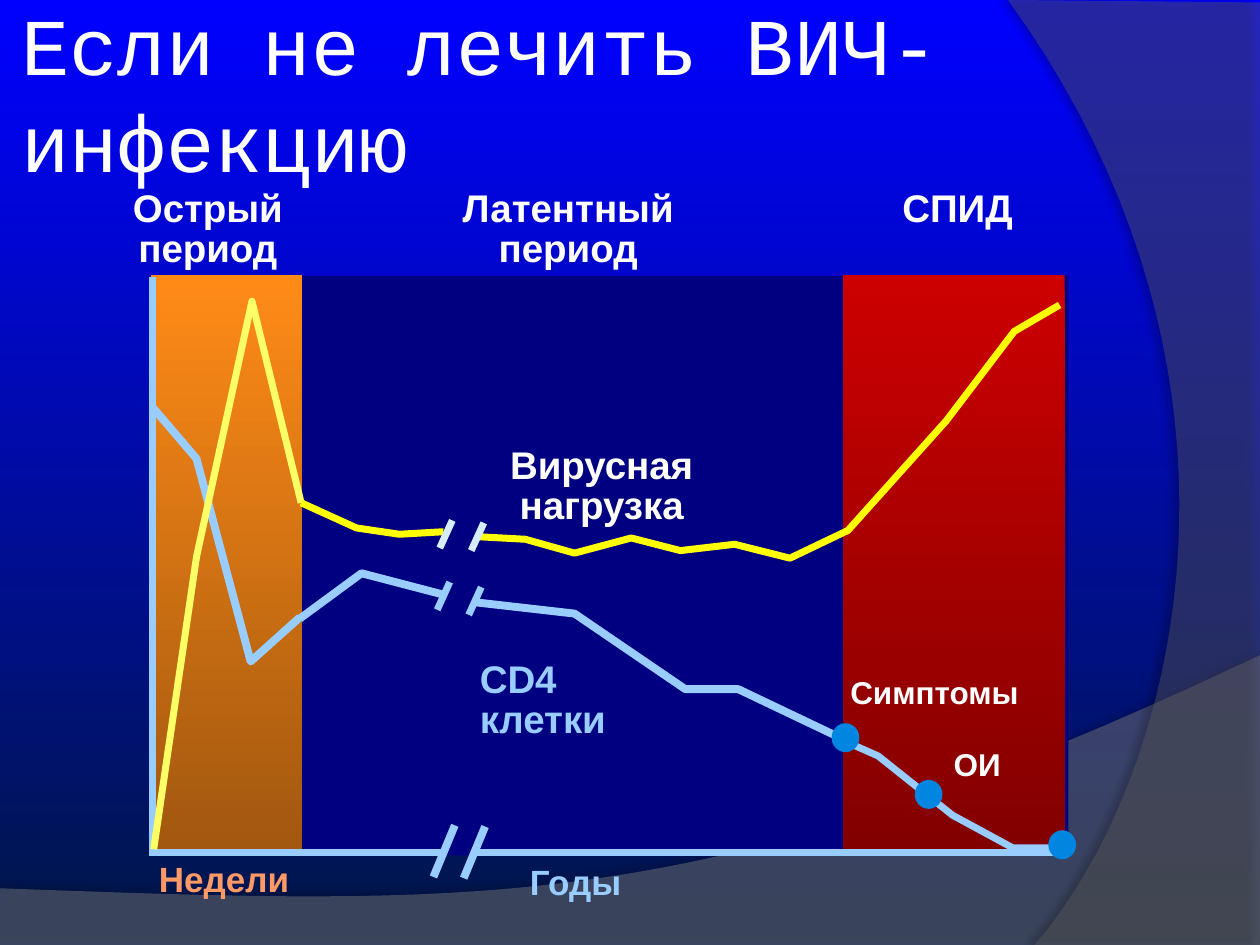
from lxml.etree import SubElement, Element
from pptx import Presentation
from pptx.dml.color import RGBColor
from pptx.enum.shapes import MSO_CONNECTOR, MSO_SHAPE
from pptx.enum.text import MSO_ANCHOR, PP_ALIGN
from pptx.oxml.ns import qn
from pptx.util import Inches, Pt

HEX = {
    "top": "0000FF", "base": "001746", "wave": "7F7F7F", "arc": "5E5E5E",
    "navy": "000080", "red": "CC0000", "wine": "820000", "amber": "FF8B17",
    "brown": "A2580F", "sky": "99CCFF", "pale": "D6ECFF", "sun": "FFFF00",
    "lemon": "FFFF66", "dot": "0085E0", "peach": "FF9966", "white": "FFFFFF",
    "black": "000000",
}
TITLE = "Если не лечить ВИЧ-инфекцию"

# A six-number point is a Bezier curve: two controls and an end.
DECOR = [  # points, colour, opacity, shadow opacity, distance, angle
    ([(0, 7.05), (0, 7.51), (10, 7.51), (10, 5.2),
      (5.59, 7.29, 3.91, 7.19, 0, 7.05)], "wave", 45, 35, 3.5, 270),
    ([(10, 0.02), (10, 7.5), (8.21, 7.5),
      (9.35, 6.19, 10.18, 3, 8, 0)], "arc", 40, 45, 4, 180),
]
PANELS = [  # left, top, width, height, colours
    (1.22, 2.19, 7.26, 4.6, ["navy"]),
    (6.69, 2.18, 1.76, 4.57, ["red", "wine"]),
    (1.2, 2.18, 1.2, 4.57, ["amber", "brown"]),
]
AXES = [  # from, to
    ((3.77, 6.77), (8.49, 6.77)),
    ((1.18, 6.77), (3.54, 6.77)),
    ((1.21, 6.79), (1.21, 2.2)),
]
CURVES = [  # colour, width, points
    ("sky", 4.5, [(1.21, 3.23), (1.56, 3.64), (1.99, 5.25), (2.38, 4.9)]),
    ("sky", 4.5, [(2.38, 4.91), (2.87, 4.55), (3.52, 4.72)]),
    ("sky", 4.5, [(3.77, 4.78), (4.56, 4.87), (5.44, 5.47), (5.86, 5.47),
                  (6.7, 5.87)]),
    ("sky", 4, [(6.7, 5.88), (6.97, 6), (7.56, 6.47), (8.04, 6.73),
                (8.47, 6.73)]),
    ("lemon", 4, [(1.22, 6.74), (1.56, 4.42), (2, 2.39), (2.39, 3.99)]),
    ("sun", 4, [(2.39, 3.99), (2.83, 4.19), (3.17, 4.24), (3.52, 4.22)]),
    ("sun", 4, [(3.8, 4.26), (4.17, 4.28), (4.56, 4.39), (5.01, 4.27),
                (5.4, 4.37), (5.83, 4.32), (6.27, 4.43), (6.73, 4.21),
                (7.51, 3.34), (8.05, 2.63), (8.41, 2.42)]),
]
BREAKS = [  # top ends of the two strokes, run, drop, colour, width
    ([(3.59, 4.13), (3.84, 4.15)], 0.1, 0.22, "pale", 4),
    ([(3.57, 4.62), (3.82, 4.66)], 0.1, 0.22, "sky", 4),
    ([(3.61, 6.55), (3.85, 6.56)], 0.17, 0.41, "sky", 4.5),
]
DOTS = [(6.6, 5.74), (7.26, 6.19), (8.32, 6.59)]
MID, LEFT = PP_ALIGN.CENTER, PP_ALIGN.LEFT
LABELS = [  # text, left, top, width, height, size, colour, align, spacing
    ("Острый период", 0.83, 1.47, 1.64, 0.73, 22, "white", MID, 0.85),
    ("Латентный период", 3.31, 1.47, 2.4, 0.73, 22, "white", MID, 0.85),
    ("СПИД", 6.47, 1.47, 2.26, 0.41, 22, "white", MID, 0.85),
    ("Вирусная нагрузка", 3.74, 3.51, 2.07, 0.73, 22, "white", MID, 0.85),
    ("CD4 клетки", 3.71, 5.21, 1.66, 0.73, 22, "sky", LEFT, 0.85),
    ("Симптомы", 6.65, 5.34, 1.93, 0.36, 18, "white", LEFT, 0.85),
    ("ОИ", 7.47, 5.91, 1.93, 0.36, 18, "white", LEFT, 0.85),
    (" Недели", 0.9, 6.76, 1.68, 0.44, 20, "peach", MID, 1.0),
    (" Годы", 3.69, 6.78, 1.68, 0.44, 20, "sky", MID, 1.0),
]


def rgb(name):
    return RGBColor.from_string(HEX[name])


def assign(obj, **vals):
    for key, val in vals.items():
        setattr(obj, key, val)


def paint(fill, names):
    """Fill with one colour, or with a gradient from top to bottom."""
    if len(names) == 1:
        fill.solid()
        fill.fore_color.rgb = rgb(names[0])
        return
    fill.gradient()
    fill.gradient_angle = 270
    for stop, name, pos in zip(fill.gradient_stops, names, (0, 1)):
        assign(stop, position=pos)
        stop.color.rgb = rgb(name)


def cast(effects, alpha, blur, dist, angle):
    """Add an outer shadow to an effect list."""
    shade = SubElement(effects, qn("a:outerShdw"), blurRad=str(Pt(blur)),
                       dist=str(Pt(dist)), dir=str(angle * 60000),
                       algn="ctr", rotWithShape="0")
    tint = SubElement(shade, qn("a:srgbClr"), val=HEX["black"])
    SubElement(tint, qn("a:alpha"), val=str(alpha * 1000))


def flatten(points, steps=40):
    """Turn each Bezier curve into short straight steps."""
    out = []
    for pt in points:
        if len(pt) == 2:
            out.append(pt)
            continue
        ctrl = [out[-1], pt[:2], pt[2:4], pt[4:]]
        for i in range(1, steps + 1):
            t = i / steps
            mix = ((1 - t) ** 3, 3 * t * (1 - t) ** 2, 3 * t * t * (1 - t), t ** 3)
            out.append(tuple(sum(m * c[k] for m, c in zip(mix, ctrl))
                             for k in (0, 1)))
    return out


def outline(shapes, points, close):
    pts = [(Inches(x), Inches(y)) for x, y in flatten(points)]
    pen = shapes.build_freeform(*pts[0], scale=1.0)
    pen.add_line_segments(pts[1:], close=close)
    shape = pen.convert_to_shape()
    shape.shadow.inherit = False
    return shape


def stroke(line, name, width):
    line.color.rgb = rgb(name)
    line.width = Pt(width)


def rule(shapes, start, end, name, width):
    ends = [Inches(v) for v in (*start, *end)]
    line = shapes.add_connector(MSO_CONNECTOR.STRAIGHT, *ends)
    stroke(line.line, name, width)
    SubElement(line._element.spPr, qn("a:effectLst"))


def block(shapes, kind, box, names):
    shape = shapes.add_shape(kind, *map(Inches, box))
    shape.shadow.inherit = False
    paint(shape.fill, names)
    shape.line.fill.background()


def write(shapes, text, box, size, name, face="Arial", align=LEFT,
          spacing=1.0, bold=False, inset=0.1, anchor=MSO_ANCHOR.TOP):
    frame = shapes.add_textbox(*map(Inches, box)).text_frame
    assign(frame, word_wrap=True, vertical_anchor=anchor,
           margin_left=Inches(inset), margin_right=Inches(inset),
           margin_top=Inches(0.05), margin_bottom=Inches(0.05))
    para = frame.paragraphs[0]
    assign(para, alignment=align, line_spacing=spacing)
    run = para.add_run()
    run.text = text
    assign(run.font, name=face, size=Pt(size), bold=bold)
    run.font.color.rgb = rgb(name)
    return run


def main():
    deck = Presentation()
    assign(deck, slide_width=Inches(10), slide_height=Inches(7.5))
    slide = deck.slides.add_slide(deck.slide_layouts[6])
    paint(slide.background.fill, ["top", "base"])
    shapes = slide.shapes

    for points, name, alpha, shade, dist, angle in DECOR:
        shape = outline(shapes, points, True)
        paint(shape.fill, [name])
        shape.line.fill.background()
        props = shape._element.spPr
        tint = props.find(qn("a:solidFill"))[0]
        SubElement(tint, qn("a:alpha"), val=str(alpha * 1000))
        cast(props.find(qn("a:effectLst")), shade, 4, dist, angle)

    write(shapes, TITLE, (0.12, 0.05, 9.69, 1.36), 46, "white",
          face="Courier New", inset=0.05, anchor=MSO_ANCHOR.MIDDLE)
    for *box, names in PANELS:
        block(shapes, MSO_SHAPE.RECTANGLE, box, names)
    for start, end in AXES:
        rule(shapes, start, end, "sky", 4)
    for name, width, points in CURVES:
        shape = outline(shapes, points, False)
        shape.fill.background()
        stroke(shape.line, name, width)
        SubElement(shape._element.spPr.find(qn("a:ln")), qn("a:round"))
    for tops, run, drop, name, width in BREAKS:
        for x, y in tops:
            rule(shapes, (x, y), (x - run, y + drop), name, width)
    for x, y in DOTS:
        block(shapes, MSO_SHAPE.OVAL, (x, y, 0.22, 0.23), ["dot"])
    for text, *box, size, name, align, spacing in LABELS:
        run = write(shapes, text, box, size, name, align=align,
                    spacing=spacing, bold=True)
        effects = Element(qn("a:effectLst"))
        cast(effects, 100, 0, 2, 45)
        run.font._element.find(qn("a:solidFill")).addnext(effects)

    deck.save("out.pptx")


if __name__ == "__main__":
    main()
